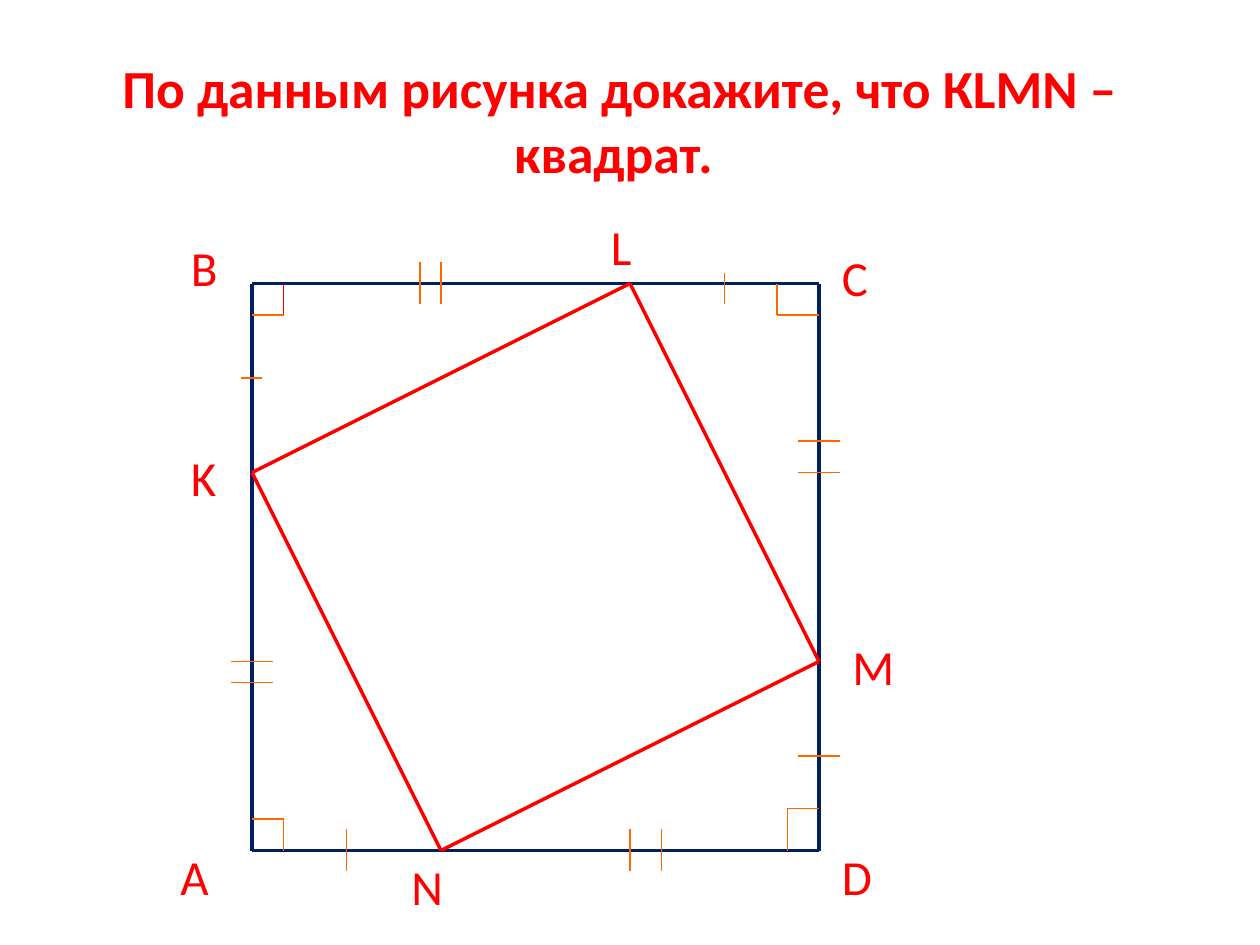
from dataclasses import dataclass
from itertools import pairwise

from lxml.etree import SubElement
from pptx import Presentation
from pptx.dml.color import RGBColor
from pptx.enum.shapes import MSO_CONNECTOR as Connector
from pptx.enum.text import MSO_ANCHOR as Anchor, MSO_AUTO_SIZE as AutoSize, PP_ALIGN as Align
from pptx.oxml.ns import qn
from pptx.util import Pt

EMU_PER_PX = 7620  # 120 px to the inch


@dataclass(frozen=True)
class Theme:
    font: str = "Calibri"
    red: RGBColor = RGBColor(0xFF, 0x00, 0x00)
    navy: RGBColor = RGBColor(0x00, 0x20, 0x60)
    orange: RGBColor = RGBColor(0xFF, 0x66, 0x00)
    title_size: float = 30.6
    label_size: float = 28
    outer_width: float = 2.25
    inner_width: float = 2
    mark_width: float = 0.75


THEME = Theme()

LEFT, TOP, RIGHT, BOTTOM = 240, 270, 780, 810
A, B, C, D = (LEFT, BOTTOM), (LEFT, TOP), (RIGHT, TOP), (RIGHT, BOTTOM)
K, L, M, N = (LEFT, 450), (600, TOP), (RIGHT, 630), (420, BOTTOM)

LABEL_WIDTH, LABEL_HEIGHT = 70, 68
LABELS = {
    "B": (170, 220), "C": (790, 230), "D": (790, 800), "А": (160, 800),
    "K": (170, 420), "L": (570, 200), "M": (800, 600), "N": (380, 810),
}

# Corner, inner point of the right-angle mark, colour of its upright stroke
RIGHT_ANGLES = [
    (B, (270, 300), THEME.red),
    (C, (740, 300), THEME.orange),
    (A, (270, 780), THEME.orange),
    (D, (750, 770), THEME.orange),
]

# Centre and half length of each equality tick
UPRIGHT_TICKS = [
    (690, 275, 15), (330, BOTTOM, 20),
    (400, TOP, 20), (420, TOP, 20), (600, BOTTOM, 20), (630, BOTTOM, 20),
]
LEVEL_TICKS = [
    (LEFT, 360, 10), (RIGHT, 720, 20),
    (LEFT, 630, 20), (LEFT, 650, 20), (RIGHT, 420, 20), (RIGHT, 450, 20),
]


def px(*lengths):
    return [length * EMU_PER_PX for length in lengths]


def style_text(frame, text, size, bold=False):
    frame.text = text
    frame.vertical_anchor = Anchor.MIDDLE
    frame.word_wrap = True
    font = frame.paragraphs[0].font
    font.name, font.size, font.bold = THEME.font, Pt(size), bold
    font.color.rgb = THEME.red


def add_title(slide, text):
    title = slide.shapes.title
    title.left, title.top, title.width, title.height = px(60, 42, 1060, 144)
    style_text(title.text_frame, text, THEME.title_size, bold=True)
    title.text_frame.auto_size = AutoSize.NONE
    title.text_frame.paragraphs[0].alignment = Align.CENTER


def add_label(slide, letter, position):
    label = slide.shapes.add_textbox(*px(*position, LABEL_WIDTH, LABEL_HEIGHT))
    style_text(label.text_frame, letter, THEME.label_size)
    label.text_frame.auto_size = AutoSize.SHAPE_TO_FIT_TEXT


def add_segment(slide, start, end, color, width):
    segment = slide.shapes.add_connector(Connector.STRAIGHT, *px(*start, *end))
    segment.line.color.rgb = color
    segment.line.width = Pt(width)
    SubElement(segment._element.spPr, qn("a:effectLst"))


def add_quadrilateral(slide, vertices, color, width):
    for start, end in pairwise([*vertices, vertices[0]]):
        add_segment(slide, start, end, color, width)


def add_right_angle(slide, corner, inner, upright_color):
    add_segment(slide, (inner[0], corner[1]), inner, upright_color, THEME.mark_width)
    add_segment(slide, inner, (corner[0], inner[1]), THEME.orange, THEME.mark_width)


def add_tick(slide, x, y, dx=0, dy=0):
    add_segment(slide, (x - dx, y - dy), (x + dx, y + dy), THEME.orange, THEME.mark_width)


def main():
    deck = Presentation()
    deck.slide_width, deck.slide_height = px(1200, 900)
    slide = deck.slides.add_slide(deck.slide_layouts[5])

    add_title(slide, "По данным рисунка докажите, что КLMN – квадрат. ")
    add_quadrilateral(slide, [A, B, C, D], THEME.navy, THEME.outer_width)
    add_quadrilateral(slide, [K, L, M, N], THEME.red, THEME.inner_width)
    for letter, position in LABELS.items():
        add_label(slide, letter, position)
    for corner, inner, upright_color in RIGHT_ANGLES:
        add_right_angle(slide, corner, inner, upright_color)
    for x, y, half in UPRIGHT_TICKS:
        add_tick(slide, x, y, dy=half)
    for x, y, half in LEVEL_TICKS:
        add_tick(slide, x, y, dx=half)

    deck.save("out.pptx")


if __name__ == "__main__":
    main()
